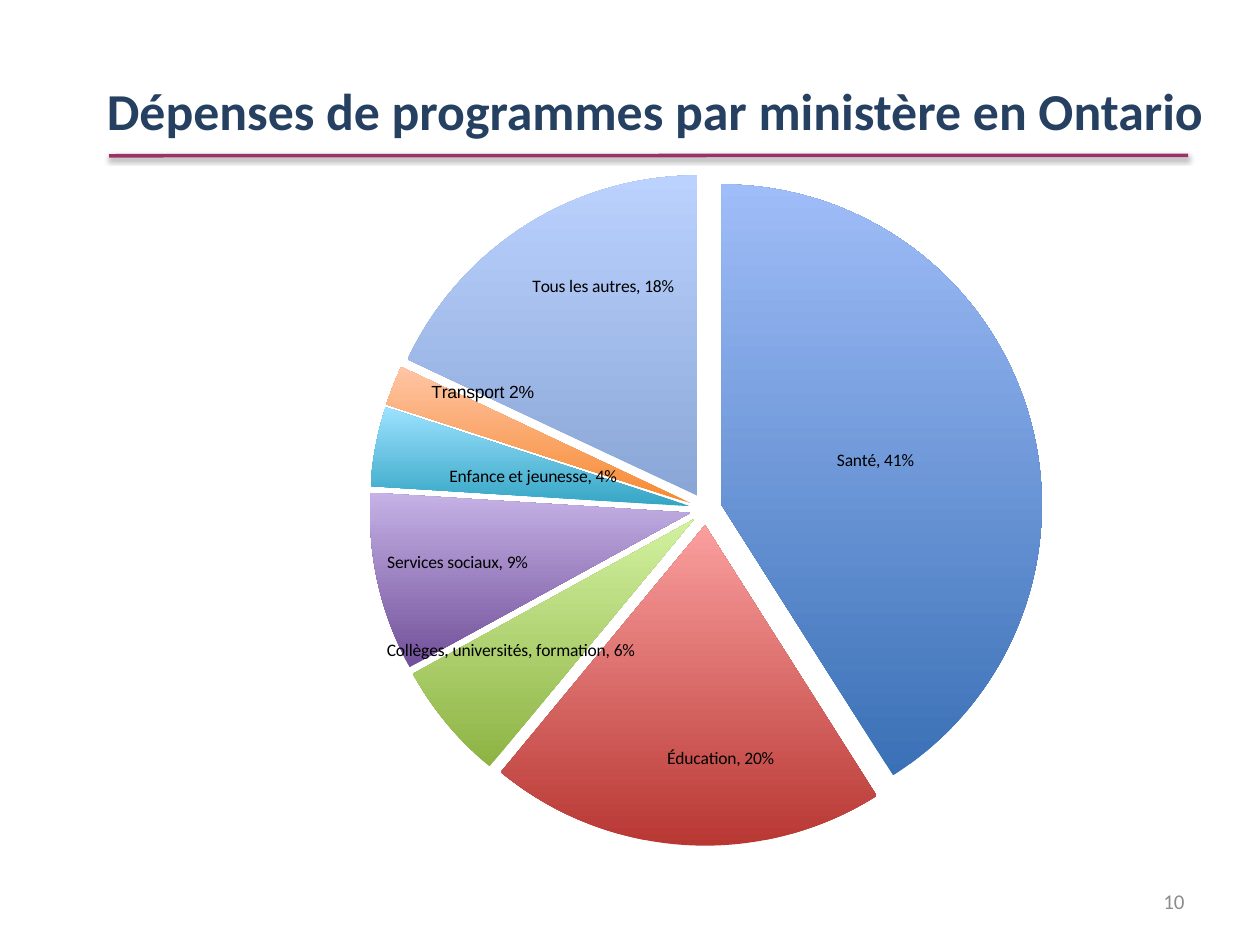
from lxml.etree import SubElement, Element
from pptx import Presentation
from pptx.chart.data import CategoryChartData
from pptx.dml.color import RGBColor
from pptx.enum.chart import XL_CHART_TYPE as ChartType, XL_LABEL_POSITION as LabelPos
from pptx.enum.shapes import MSO_CONNECTOR as Connector
from pptx.enum.text import MSO_ANCHOR as Anchor, MSO_AUTO_SIZE as AutoSize, PP_ALIGN as Align
from pptx.oxml.ns import qn
from pptx.util import Cm, Pt

FONT = "Calibri"
EXPLOSION = 5
SLICES = [
    ("Santé", 41, ", ", "9FBDF8", "3A70B6", (0, 0)),
    ("Éducation", 20, ", ", "FA9F9E", "B83733", (0.03, 0.1)),
    ("Collèges, universités, formation", 6, ", ", "D2F1A0", "8DB343", (-0.07, 0.04)),
    ("Services sociaux", 9, ", ", "C5B2E6", "714F99", (-0.09, 0.02)),
    ("Enfance et jeunesse", 4, ", ", "9CE2FF", "35A5C4", (0, 0)),
    ("Transport", 2, " ", "FFC5A5", "F68A32", (-0.07, -0.07)),
    ("Tous les autres", 18, ", ", "BBD2FF", "8AA6D6", (-0.01, -0.1)),
]


def rgb(value):
    return RGBColor.from_string(value)


def style(font, **values):
    font.color.rgb = rgb(values.pop("color"))
    for name, value in values.items():
        setattr(font, name, value)


def write(tf, text, align, **values):
    settings = {"word_wrap": True, "auto_size": AutoSize.NONE, "vertical_anchor": Anchor.MIDDLE}
    for name, value in settings.items():
        setattr(tf, name, value)
    p = tf.paragraphs[0]
    p.alignment = align
    r = p.add_run()
    r.text = text
    style(r.font, name=FONT, **values)


def add_title(s, text):
    sp = s.shapes.title
    box = {"left": Cm(1.9), "top": Cm(1.32), "width": Cm(23), "height": Cm(1.8)}
    for name, value in box.items():
        setattr(sp, name, value)
    write(sp.text_frame, text, Align.LEFT, size=Pt(29.6), bold=True, color="254061")


def add_rule(s):
    line = s.shapes.add_connector(Connector.STRAIGHT, Cm(2.2), Cm(3.14), Cm(23.95), Cm(3.13))
    line.line.color.rgb = rgb("993366")
    line.line.width = Pt(2)
    effects = SubElement(line._element.spPr, qn("a:effectLst"))
    shadow = SubElement(effects, qn("a:outerShdw"), blurRad=str(Pt(3.1)),
                        dist=str(Pt(1.6)), dir="5400000", rotWithShape="0")
    color = SubElement(shadow, qn("a:srgbClr"), val="000000")
    SubElement(color, qn("a:alpha"), val="38000")


def make_layout(**values):
    layout = Element(qn("c:layout"))
    manual = SubElement(layout, qn("c:manualLayout"))
    for name, value in values.items():
        SubElement(manual, qn(f"c:{name}"), val=str(value))
    return layout


def format_slice(point, name, value, separator, light, dark):
    fill = point.format.fill
    fill.gradient()
    fill.gradient_angle = 90
    for stop, color in zip(fill.gradient_stops, (dark, light)):
        stop.color.rgb = rgb(color)
    point.format.line.fill.background()
    label = point.data_label
    r = label.text_frame.paragraphs[0].add_run()
    r.text = f"{name}{separator}{value}%"
    font = "Arial" if separator == " " else FONT
    style(r.font, name=font, size=Pt(10), color="000000")
    label.position = LabelPos.CENTER


def arrange_chart(chart):
    root = chart.element
    area = next(root.iter(qn("c:plotArea")))
    for old in area.findall(qn("c:layout")):
        area.remove(old)
    area.insert(0, make_layout(layoutTarget="inner", xMode="edge", yMode="edge",
                               x=0.19, y=0.02, w=0.79, h=0.92))
    ser = next(root.iter(qn("c:ser")))
    ser.find(qn("c:tx")).addnext(Element(qn("c:explosion"), val=str(EXPLOSION)))
    for label, (*_, (dx, dy)) in zip(root.iter(qn("c:dLbl")), SLICES):
        if dx or dy:
            label.find(qn("c:idx")).addnext(make_layout(x=dx, y=dy))


def add_pie(s):
    data = CategoryChartData()
    data.categories = [name for name, *_ in SLICES]
    data.add_series("Dépenses", [value for _, value, *_ in SLICES])
    chart = s.shapes.add_chart(ChartType.PIE, Cm(4.19), Cm(3.15), Cm(17.17), Cm(14.83), data).chart
    chart.has_legend = False
    chart.has_title = False
    style(chart.font, name=FONT, size=Pt(10), color="000000")
    plot = chart.plots[0]
    plot.vary_by_categories = True
    for i, (*values, _) in enumerate(SLICES):
        format_slice(plot.series[0].points[i], *values)
    arrange_chart(chart)


def add_page_number(s, number):
    sp = s.shapes.add_textbox(Cm(18.2), Cm(17.65), Cm(5.93), Cm(1.02))
    write(sp.text_frame, number, Align.RIGHT, size=Pt(12), color="8C8C8C")


def main():
    prs = Presentation()
    prs.slide_width, prs.slide_height = Cm(25.4), Cm(19.05)
    s = prs.slides.add_slide(prs.slide_layouts[5])
    add_title(s, "Dépenses de programmes par ministère en Ontario")
    add_rule(s)
    add_pie(s)
    add_page_number(s, "10")
    prs.save("out.pptx")


if __name__ == "__main__":
    main()
